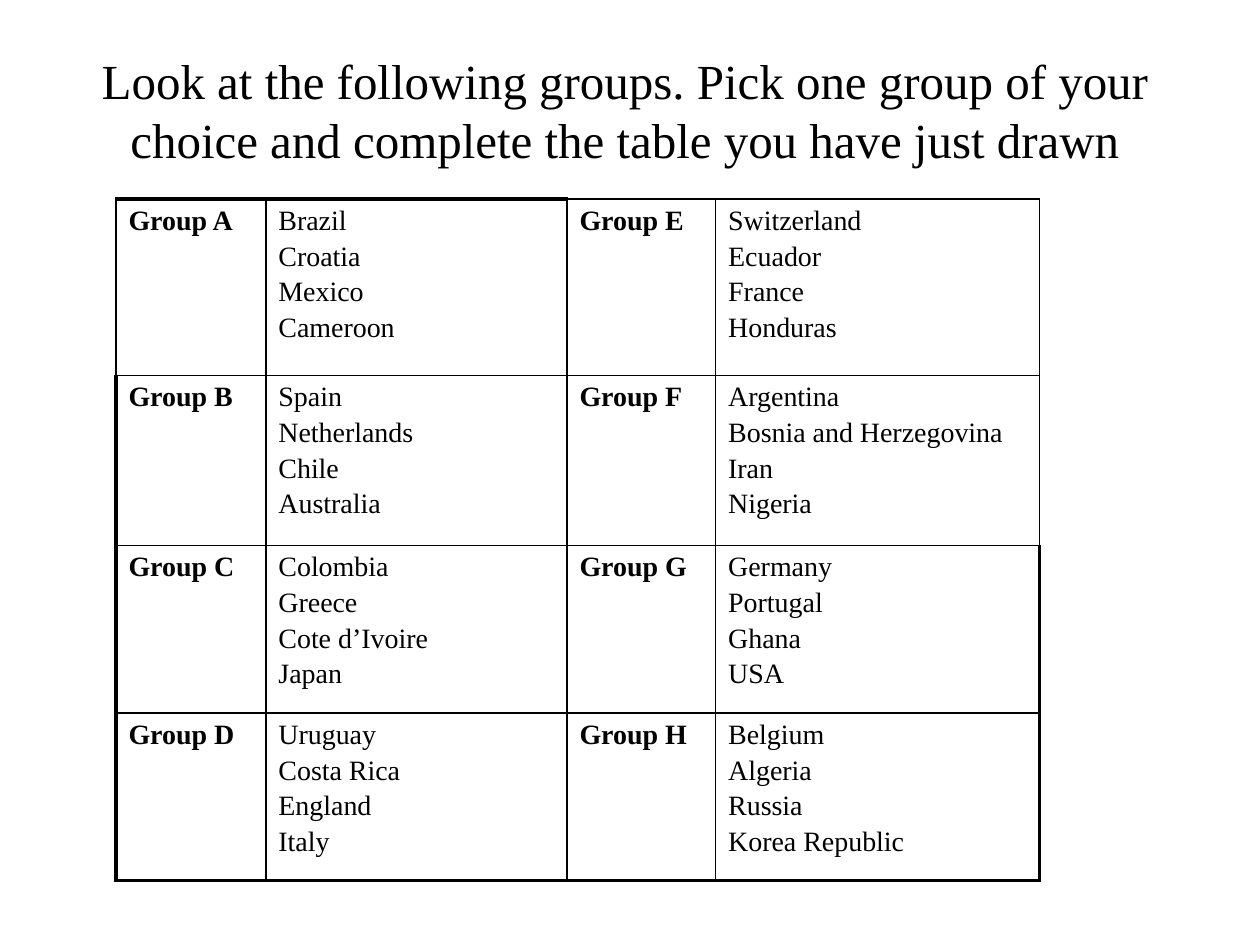
from dataclasses import dataclass

from lxml import etree
from pptx import Presentation
from pptx import util as u
from pptx.dml.color import RGBColor
from pptx.enum import text
from pptx.oxml.ns import qn


@dataclass(frozen=True)
class Theme:
    font: str = "Times New Roman"
    ink: str = "000000"
    title_size: float = 28
    table_size: float = 16
    paragraph_gap: float = 2.6
    thin: float = 1
    thick: float = 2.25


@dataclass(frozen=True)
class Group:
    letter: str
    teams: tuple[str, ...]


THEME = Theme()
TITLE = ("Look at the following groups. Pick one group of your choice "
         "and complete the table you have just drawn")
GROUPS = [
    Group("A", ("Brazil", "Croatia", "Mexico", "Cameroon")),
    Group("B", ("Spain", "Netherlands", "Chile", "Australia")),
    Group("C", ("Colombia", "Greece", "Cote d’Ivoire", "Japan")),
    Group("D", ("Uruguay", "Costa Rica", "England", "Italy")),
    Group("E", ("Switzerland", "Ecuador", "France", "Honduras")),
    Group("F", ("Argentina", "Bosnia and Herzegovina", "Iran", "Nigeria")),
    Group("G", ("Germany", "Portugal", "Ghana", "USA")),
    Group("H", ("Belgium", "Algeria", "Russia", "Korea Republic")),
]
COLUMN_WIDTHS = (1.19, 2.39, 1.18, 2.57)
ROW_HEIGHTS = (1.4, 1.35, 1.33, 1.33)


def format_paragraph(paragraph, size: float, bold: bool = False) -> None:
    font = paragraph.font
    font.name, font.size, font.bold = THEME.font, u.Pt(size), bold
    font.color.rgb = RGBColor.from_string(THEME.ink)


def add_title(slide) -> None:
    title = slide.shapes.title
    title.left, title.top = u.Inches(0.25), u.Inches(0.33)
    title.width, title.height = u.Inches(9.42), u.Inches(1.08)
    frame = title.text_frame
    frame.text = TITLE
    frame.word_wrap = True
    frame.auto_size = text.MSO_AUTO_SIZE.NONE
    frame.vertical_anchor = text.MSO_ANCHOR.MIDDLE
    paragraph = frame.paragraphs[0]
    paragraph.alignment = text.PP_ALIGN.CENTER
    format_paragraph(paragraph, THEME.title_size)


def set_borders(cell, thick_sides: dict[str, bool]) -> None:
    """Draw the borders in the order given; True marks a thick one."""
    properties = cell._tc.get_or_add_tcPr()
    for side, is_thick in thick_sides.items():
        width = u.Pt(THEME.thick if is_thick else THEME.thin)
        line = etree.SubElement(properties, qn(f"a:ln{side}"), w=str(int(width)))
        fill = etree.SubElement(line, qn("a:solidFill"))
        etree.SubElement(fill, qn("a:srgbClr"), val=THEME.ink)


def fill_cell(cell, lines: tuple[str, ...], bold: bool) -> None:
    cell.text = "\n".join(lines)
    for index, paragraph in enumerate(cell.text_frame.paragraphs):
        format_paragraph(paragraph, THEME.table_size, bold)
        if index:
            paragraph.space_before = u.Pt(THEME.paragraph_gap)


def add_group_table(slide) -> None:
    """Lay the groups out downwards, in pairs of name and team columns."""
    row_count, column_count = len(ROW_HEIGHTS), len(COLUMN_WIDTHS)
    table = slide.shapes.add_table(
        row_count, column_count, u.Inches(0.92), u.Inches(1.58),
        u.Inches(sum(COLUMN_WIDTHS)), u.Inches(sum(ROW_HEIGHTS))).table
    table.first_row = table.horz_banding = False
    for column, width in zip(table.columns, COLUMN_WIDTHS):
        column.width = u.Inches(width)
    for row, height in zip(table.rows, ROW_HEIGHTS):
        row.height = u.Inches(height)

    for index, group in enumerate(GROUPS):
        pair, row = divmod(index, row_count)
        name_column = 2 * pair
        fill_cell(table.cell(row, name_column), (f"Group {group.letter}",), True)
        fill_cell(table.cell(row, name_column + 1), group.teams, False)

    for row in range(row_count):
        for column in range(column_count):
            cell = table.cell(row, column)
            set_borders(cell, {
                "L": column == 0 and row > 0,
                "R": column == column_count - 1 and row > 1,
                "T": row == 0 and column < 2,
                "B": row == row_count - 1,
            })
            cell.fill.background()


def main() -> None:
    presentation = Presentation()
    presentation.slide_width = u.Inches(10)
    presentation.slide_height = u.Inches(7.5)
    slide = presentation.slides.add_slide(presentation.slide_layouts[5])
    add_title(slide)
    add_group_table(slide)
    presentation.save("out.pptx")


if __name__ == "__main__":
    main()
